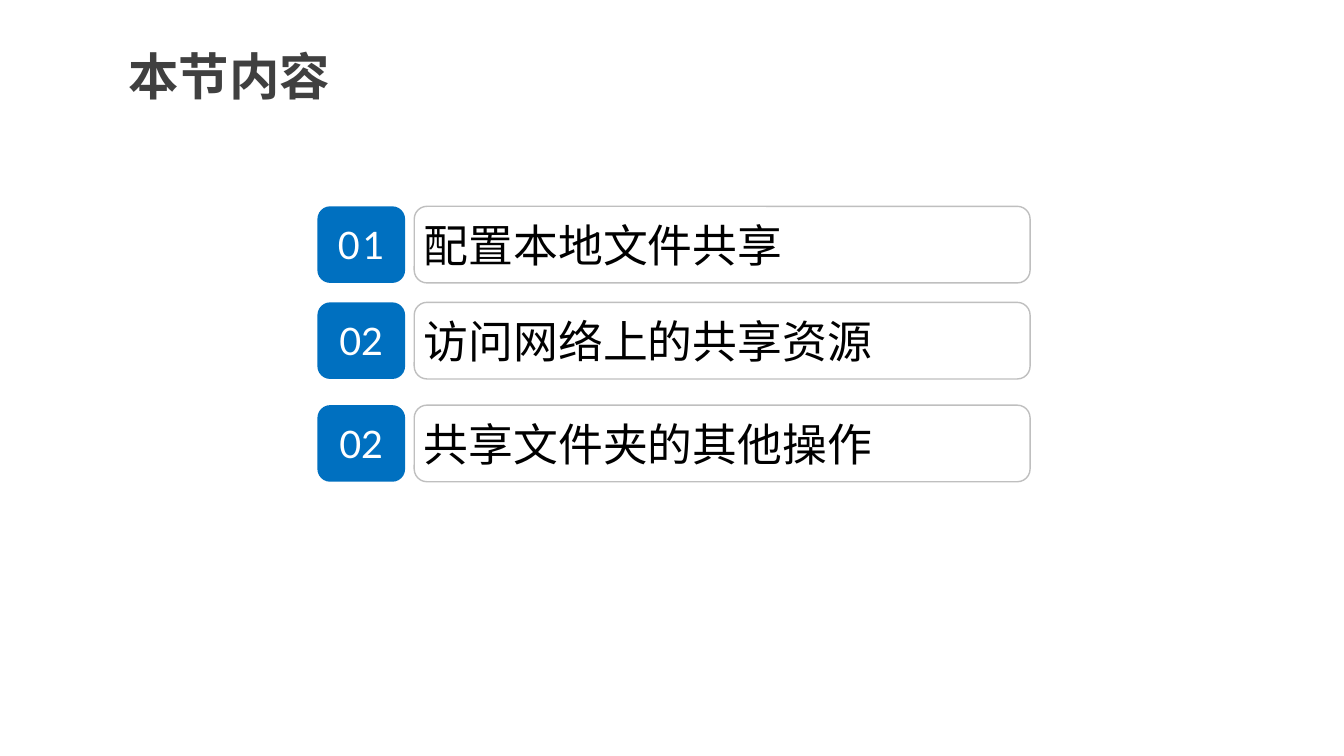
import pptx
import pptx.dml.color
import pptx.enum.shapes
import pptx.enum.text
import pptx.util
from lxml import etree
from pptx.dml.color import RGBColor
from pptx.util import Cm

BLUE = RGBColor(0x00, 0x70, 0xC0)
GREY = RGBColor(0xBF, 0xBF, 0xBF)
DARK = RGBColor(0x40, 0x40, 0x40)
BLACK = RGBColor(0x00, 0x00, 0x00)
WHITE = RGBColor(0xFF, 0xFF, 0xFF)

CHINESE_FONT = "Noto Sans CJK SC"
ROW_HEIGHT = Cm(1.93)
CENTER = pptx.enum.text.PP_ALIGN.CENTER
LEFT = pptx.enum.text.PP_ALIGN.LEFT

# Top in cm, number, letter spacing in points, topic, Latin font of the topic
TOPICS = [
    (5.2, "01", 2.2, "配置本地文件共享", CHINESE_FONT),
    (7.62, "02", 0, "访问网络上的共享资源", "Lato"),
    (10.21, "02", 0, "共享文件夹的其他操作", "Lato"),
]


def write_text(box, text, size, font, color, align, bold=False, spacing=0):
    """Fill the box's paragraph; spacing is the letter spacing in points."""
    para = box.text_frame.paragraphs[0]
    para.alignment = align
    span = para.add_run()
    span.text = text
    span.font.size = pptx.util.Pt(size)
    span.font.name = font
    span.font.bold = bold
    span.font.color.rgb = color
    properties = span.font._element
    if spacing:
        properties.set("spc", str(round(spacing * 100)))
    latin = properties.find(pptx.oxml.ns.qn("a:latin"))
    east_asian = etree.Element(pptx.oxml.ns.qn("a:ea"), typeface=CHINESE_FONT)
    latin.addnext(east_asian)


def add_title(page, text):
    box = page.shapes.add_textbox(Cm(2.87), Cm(1.02), Cm(5.82), Cm(1.8))
    box.text_frame.word_wrap = True
    write_text(box, text, 36, "Arial", DARK, CENTER, bold=True)


def add_rounded_box(page, left, top, width):
    box = page.shapes.add_shape(
        pptx.enum.shapes.MSO_SHAPE.ROUNDED_RECTANGLE, left, top, width, ROW_HEIGHT
    )
    box.shadow.inherit = False
    box.text_frame.word_wrap = True
    box.text_frame.vertical_anchor = pptx.enum.text.MSO_ANCHOR.MIDDLE
    return box


def add_number(page, top, number, spacing):
    box = add_rounded_box(page, Cm(8), top, Cm(2.21))
    box.fill.solid()
    box.fill.fore_color.rgb = BLUE
    box.line.fill.background()
    write_text(box, number, 27, "Lato", WHITE, CENTER, spacing=spacing)


def add_topic(page, top, topic, font):
    box = add_rounded_box(page, Cm(10.44), top, Cm(15.52))
    box.fill.background()
    box.line.color.rgb = GREY
    box.line.width = pptx.util.Pt(1)
    frame = box.text_frame
    frame.margin_left = frame.margin_right = Cm(0.15)
    frame.margin_top = frame.margin_bottom = Cm(0.08)
    write_text(box, topic, 32, font, BLACK, LEFT)


def main():
    deck = pptx.Presentation()
    deck.slide_width = Cm(33.87)
    deck.slide_height = Cm(19.05)
    page = deck.slides.add_slide(deck.slide_layouts[6])
    add_title(page, "本节内容")
    for top, number, spacing, topic, font in TOPICS:
        add_number(page, Cm(top), number, spacing)
        add_topic(page, Cm(top), topic, font)
    deck.save("out.pptx")


if __name__ == "__main__":
    main()
